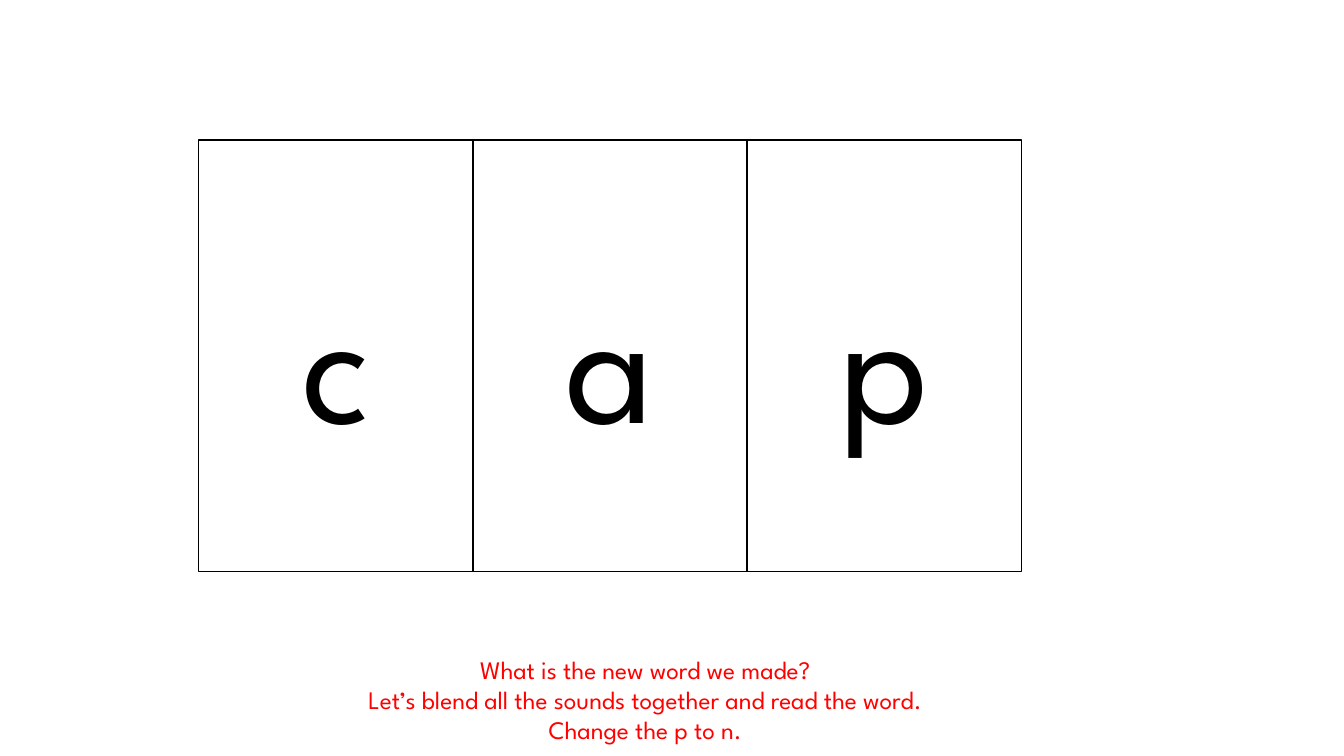
from pptx import Presentation
from pptx.dml.color import RGBColor
from pptx.enum import shapes, text
from pptx.util import Inches, Pt

COLORS = {"card": "FFFFFF", "ink": "000000", "prompt": "FF0000"}


class SlideBuilder:
    def __init__(self, slide, font):
        self.slide = slide
        self.font = font

    def color(self, name):
        return RGBColor.from_string(COLORS[name])

    def set_lines(self, tf, lines, size, color):
        """Fill a text frame with centred paragraphs."""
        tf.word_wrap = True
        tf.text = "\n".join(lines)
        for p in tf.paragraphs:
            p.alignment = text.PP_ALIGN.CENTER
            for r in p.runs:
                r.font.name = self.font
                r.font.size = Pt(size)
                r.font.color.rgb = self.color(color)

    def letter_card(self, letter, left, top, width, height):
        sp = self.slide.shapes.add_shape(
            shapes.MSO_SHAPE.RECTANGLE,
            Inches(left), Inches(top), Inches(width), Inches(height))
        sp.shadow.inherit = False
        sp.fill.solid()
        sp.fill.fore_color.rgb = self.color("card")
        sp.line.color.rgb = self.color("ink")
        sp.line.width = Pt(1)
        sp.text_frame.vertical_anchor = text.MSO_ANCHOR.MIDDLE
        self.set_lines(sp.text_frame, [letter], 120, "ink")

    def text_box(self, lines, left, top, width, height, size, color):
        box = self.slide.shapes.add_textbox(
            Inches(left), Inches(top), Inches(width), Inches(height))
        self.set_lines(box.text_frame, lines, size, color)
        box.text_frame.auto_size = text.MSO_AUTO_SIZE.SHAPE_TO_FIT_TEXT


def main():
    prs = Presentation()
    prs.slide_width = Inches(13.33)
    prs.slide_height = Inches(7.5)
    s = SlideBuilder(prs.slides.add_slide(prs.slide_layouts[6]), "League Spartan")

    card_width = 2.72
    for i, letter in enumerate("cap"):
        s.letter_card(letter, 1.97 + i * card_width, 1.39, card_width, 4.28)

    s.text_box(
        ["What is the new word we made?",
         "Let’s blend all the sounds together and read the word.",
         "Change the p to n."],
        1.06, 6.44, 10.68, 1.01, 18, "prompt")

    prs.save("out.pptx")


if __name__ == "__main__":
    main()
